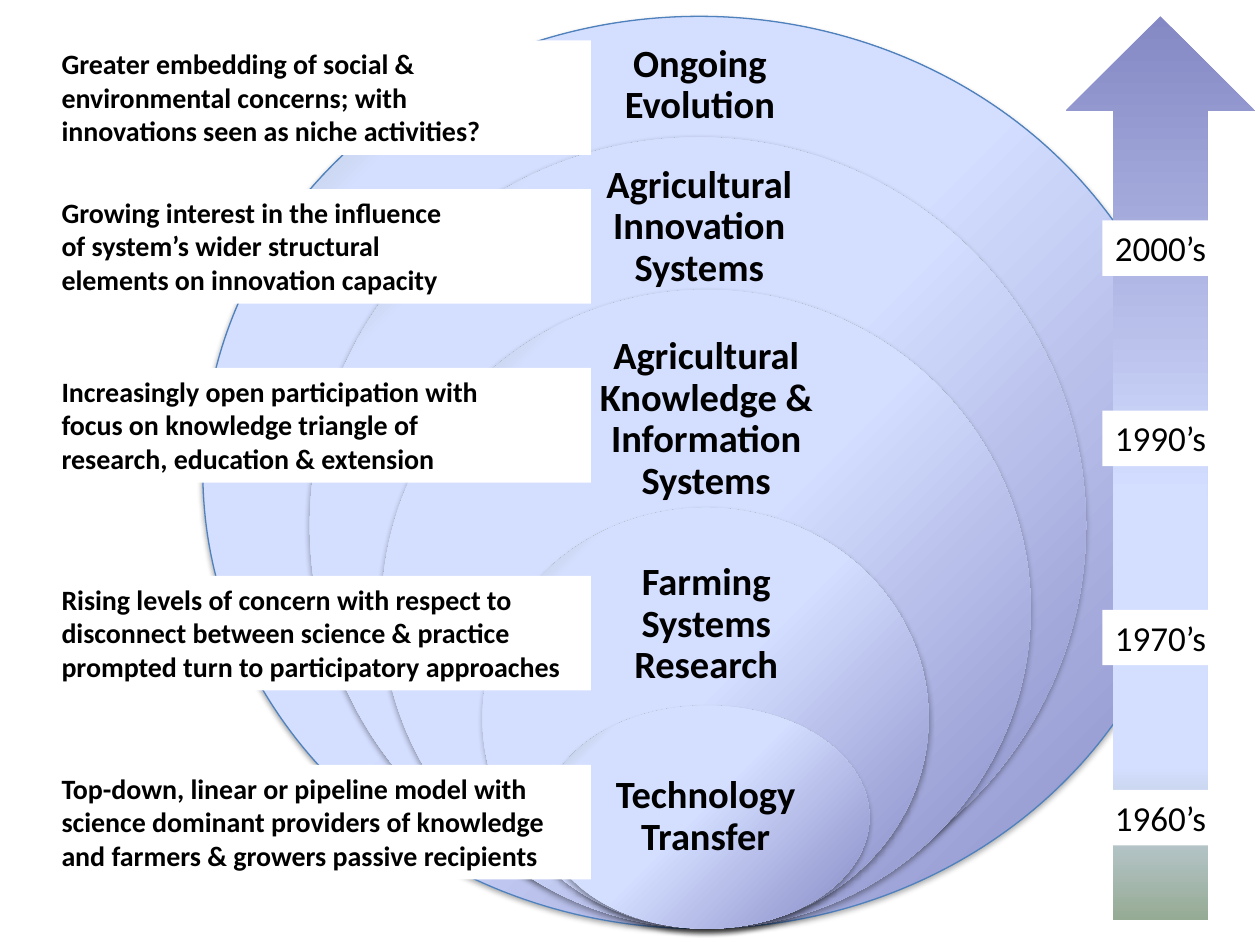
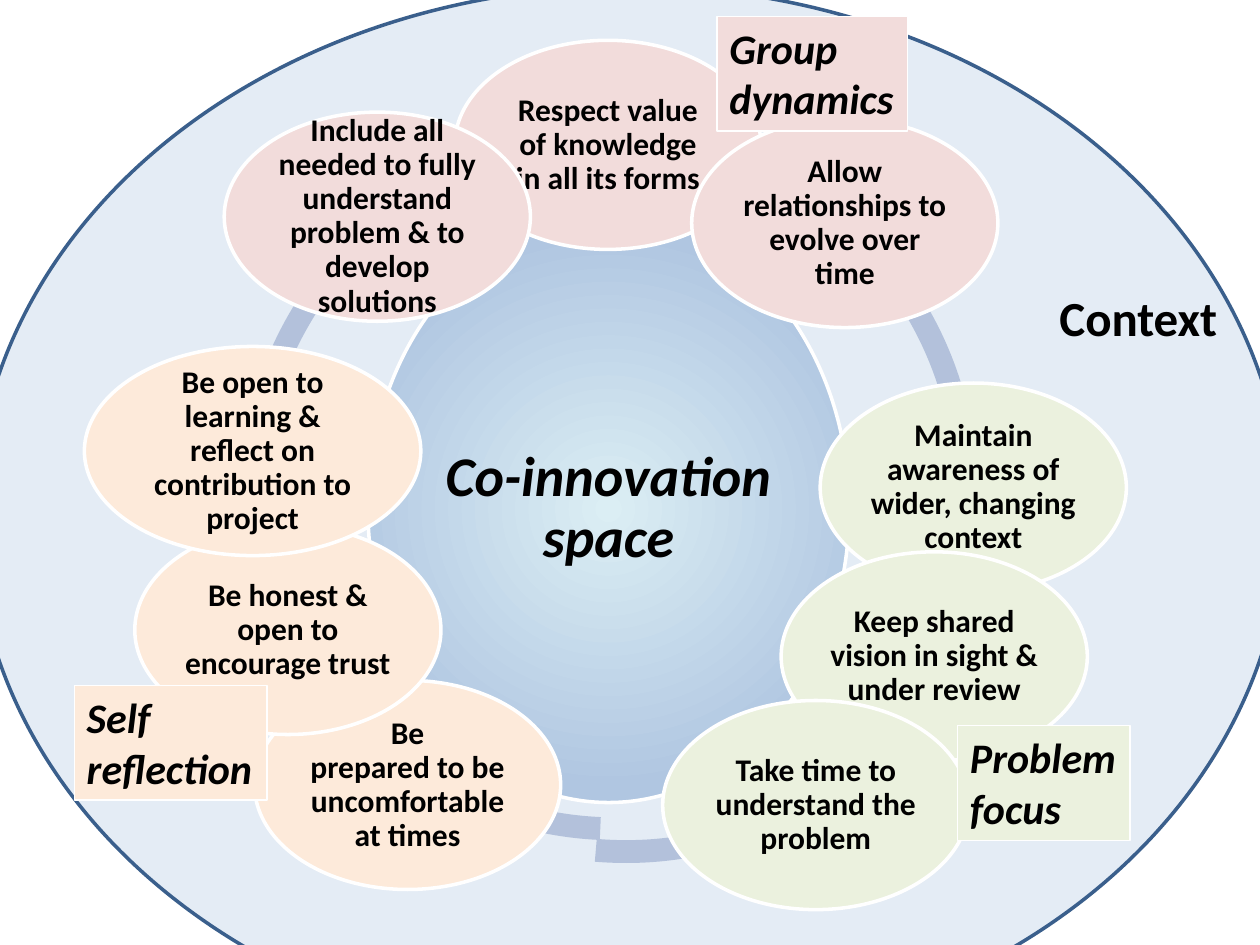
from pptx import Presentation
from pptx.dml.color import RGBColor
from pptx.enum.shapes import MSO_SHAPE
from pptx.enum.text import MSO_ANCHOR, MSO_AUTO_SIZE, PP_ALIGN
from pptx.oxml import parse_xml
from pptx.oxml.ns import nsdecls, qn
from pptx.util import Emu, Pt

SCALE = 9144
FONT = "Calibri"
INSCRIBED = 0.1464

COLORS = {
    "ink": "000000",
    "paper": "FFFFFF",
    "blue": "4F81BD",
    "rim": "3A5F8C",
    "arc": "B3C1DB",
    "group": "F2DCDB",
    "problem": "EBF1DE",
    "self": "FDEADA",
}
ERA_STOPS = [(0, "8488C4"), (53, "D4DEFF"), (83, "D4DEFF"), (100, "96AB94")]
CORE_STOPS = [(0, "DBEEF4"), (74, "B0C6E1"), (83, "B0C6E1"), (100, "CAD9EB")]
DOWNWARD = '<a:lin ang="5400000" scaled="0"/>'
FROM_CORNER = '<a:path path="circle"><a:fillToRect l="100000" t="100000"/></a:path>'
FROM_CENTER = ('<a:path path="circle"><a:fillToRect l="50000" t="50000" '
               'r="50000" b="50000"/></a:path>')


class Sketch:
    """Holds the deck style and the current page."""

    def __init__(self, width, height):
        self.deck = Presentation()
        self.deck.slide_width = self.px(width)
        self.deck.slide_height = self.px(height)
        self.page = None

    def px(self, length):
        """Turn px into EMU."""
        return Emu(length * SCALE)

    def color(self, name):
        """Look up a named colour."""
        return RGBColor.from_string(COLORS[name])

    def new_page(self):
        """Start a blank page."""
        self.page = self.deck.slides.add_slide(self.deck.slide_layouts[6])

    def paint(self, shape, fill=None, line=None, weight=2):
        """Set solid fill and outline."""
        if fill:
            shape.fill.solid()
            shape.fill.fore_color.rgb = self.color(fill)
        if line:
            shape.line.color.rgb = self.color(line)
            shape.line.width = Pt(weight)
        else:
            shape.line.fill.background()

    def shape(self, kind, frame, fill="paper", line=None, weight=2):
        """Add a flat preset shape."""
        shape = self.page.shapes.add_shape(kind, *map(self.px, frame))
        shape.shadow.inherit = False
        self.paint(shape, fill, line, weight)
        return shape

    def blend(self, shape, stops, direction):
        """Replace the solid fill with a gradient."""
        marks = "".join(f'<a:gs pos="{place * 1000}"><a:srgbClr val="{tint}"/></a:gs>'
                        for place, tint in stops)
        gradient = parse_xml(f'<a:gradFill {nsdecls("a")} rotWithShape="1">'
                             f'<a:gsLst>{marks}</a:gsLst>{direction}</a:gradFill>')
        properties = shape._element.spPr
        properties.replace(properties.find(qn("a:solidFill")), gradient)

    def fade(self, shape, percent):
        """Make a solid fill partly transparent."""
        tint = shape._element.spPr.find(qn("a:solidFill"))[0]
        tint.append(parse_xml(f'<a:alpha {nsdecls("a")} val="{percent * 1000}"/>'))

    def drop_shadow(self, shape):
        """Add a soft shadow below the shape."""
        effects = shape._element.spPr.find(qn("a:effectLst"))
        effects.append(parse_xml(
            f'<a:outerShdw {nsdecls("a")} blurRad="40000" dist="23000" dir="5400000" '
            'rotWithShape="0"><a:srgbClr val="000000"><a:alpha val="35000"/>'
            '</a:srgbClr></a:outerShdw>'))

    def text(self, frame, words, size, bold=True, italic=False):
        """Add a text box with one paragraph."""
        box = self.page.shapes.add_textbox(*map(self.px, frame))
        box.text_frame.word_wrap = True
        paragraph = box.text_frame.paragraphs[0]
        paragraph.text = words
        font = paragraph.font
        font.name, font.size, font.bold, font.italic = FONT, Pt(size), bold, italic
        font.color.rgb = self.color("ink")
        return box

    def centered(self, frame, words, size, inset, italic=False):
        """Add text centred both ways in its frame."""
        text_frame = self.text(frame, words, size, italic=italic).text_frame
        text_frame.vertical_anchor = MSO_ANCHOR.MIDDLE
        text_frame.margin_left = text_frame.margin_right = self.px(inset)
        text_frame.margin_top = text_frame.margin_bottom = self.px(inset)
        text_frame.paragraphs[0].alignment = PP_ALIGN.CENTER
        text_frame.paragraphs[0].line_spacing = 0.9

    def label(self, frame, words, size, fill=None, line=None, wrap=False, **style):
        """Add a text box that grows with its words."""
        box = self.text(frame, words, size, **style)
        box.text_frame.word_wrap = wrap
        box.text_frame.auto_size = MSO_AUTO_SIZE.SHAPE_TO_FIT_TEXT
        self.paint(box, fill, line, 0.75)

    def era(self, frame, title_frame, title, line=None):
        """Add one nested ellipse and its title."""
        ellipse = self.shape(MSO_SHAPE.OVAL, frame, line=line, weight=0.75)
        self.blend(ellipse, ERA_STOPS, FROM_CORNER)
        self.drop_shadow(ellipse)
        self.centered(title_frame, title, 22, 17)

    def bubble(self, frame, words, fill="paper", size=18, inset=3, italic=False):
        """Add a white-rimmed ellipse with text in its inscribed box."""
        ellipse = self.shape(MSO_SHAPE.OVAL, frame, fill, "paper")
        left, top, width, height = frame
        across, down = round(width * INSCRIBED), round(height * INSCRIBED)
        inner = (left + across, top + down, width - 2 * across, height - 2 * down)
        self.centered(inner, words, size, inset, italic)
        return ellipse

    def arc(self, left, top, start, end):
        """Add one piece of the ring, with angles in degrees."""
        piece = self.shape(MSO_SHAPE.BLOCK_ARC, (left, top, 586, 586), "arc")
        for index, value in enumerate((start * 0.6, end * 0.6, 0.031)):
            piece.adjustments[index] = value


ERAS = [
    ((161, 13, 788, 724), (408, 32, 295, 72), "Ongoing\nEvolution", "blue"),
    ((246, 109, 616, 616), (422, 145, 266, 71), "Agricultural Innovation Systems", None),
    ((303, 230, 515, 507), (427, 298, 267, 70),
     "Agricultural Knowledge & Information Systems", None),
    ((383, 403, 354, 334), (465, 466, 191, 60), "Farming Systems Research", None),
    ((432, 560, 258, 177), (469, 604, 182, 89), "Technology Transfer", None),
]
CAPTIONS = [
    (607, "Top-down, linear or pipeline model with science dominant providers of "
          "knowledge and farmers & growers passive recipients"),
    (32, "Greater embedding of social & environmental concerns; with\n"
         "innovations seen as niche activities?"),
    (150, "Growing interest in the influence\nof system’s wider structural\n"
          "elements on innovation capacity"),
    (292, "Increasingly open participation with\nfocus on knowledge triangle of\n"
          "research, education & extension"),
    (457, "Rising levels of concern with respect to disconnect between science & "
          "practice prompted turn to participatory approaches"),
]
DECADES = [(627, "1960’s"), (484, "1970’s"), (326, "1990’s"), (175, "2000’s")]

ARCS = [
    (179, 110, 139.98, 163.3),
    (192, 97, 111.87, 137.6),
    (196, 81, 92.52, 109.91),
    (204, 99, 76.15, 94.87),
    (204, 99, 35.17, 76.17),
    (184, 112, 14.08, 32.31),
    (190, 98, 215.4, 15.94),
    (190, 103, 186.26, 214.78),
    (198, 110, 160.97, 185.07),
]
PRINCIPLES = [
    (361, 32, 243, "group", "Respect value of knowledge in all its forms"),
    (549, 94, 243, "group", "Allow relationships to evolve over time"),
    (651, 304, 243, "problem", "Maintain awareness of wider, changing context"),
    (620, 438, 243, "problem", "Keep shared\nvision in sight & under review"),
    (526, 556, 243, "problem", "Take time to understand the problem"),
    (202, 540, 243, "self", "Be\nprepared to be\nuncomfortable at times"),
    (107, 417, 243, "self", "Be honest &\nopen to encourage trust"),
    (67, 275, 267, "self", "Be open to learning &\nreflect on contribution to project"),
    (178, 89, 243, "group",
     "Include all needed to fully understand problem & to develop solutions"),
]
THEMES = [
    ((59, 544, 153, 91), "Self\nreflection", "self"),
    ((569, 13, 151, 91), "Group\ndynamics", "group"),
    ((760, 576, 137, 91), "Problem\nfocus", "problem"),
]


def build_evolution(sketch):
    """Draw the nested eras with the timeline arrow."""
    sketch.new_page()
    for era in ERAS:
        sketch.era(*era)
    for top, words in CAPTIONS:
        sketch.label((39, top, 430, 91), words, 16, "paper", wrap=True)
    arrow = sketch.shape(MSO_SHAPE.UP_ARROW, (846, 13, 150, 717))
    sketch.blend(arrow, ERA_STOPS, DOWNWARD)
    for top, decade in DECADES:
        sketch.label((875, top, 93, 44), decade, 20, "paper", bold=False)


def build_space(sketch):
    """Draw the co-innovation space with its ring of principles."""
    sketch.new_page()
    context = sketch.shape(MSO_SHAPE.OVAL, (-20, -11, 1039, 843), "blue", "rim")
    sketch.fade(context, 15)
    for arc in ARCS:
        sketch.arc(*arc)
    core = sketch.bubble((292, 171, 382, 466), "Co-innovation\nspace",
                         size=32, inset=4, italic=True)
    sketch.blend(core, CORE_STOPS, FROM_CENTER)
    for left, top, width, theme, words in PRINCIPLES:
        sketch.bubble((left, top, width, 166), words, theme)
    for frame, words, theme in THEMES:
        sketch.label(frame, words, 24, theme, "paper", italic=True)
    sketch.label((831, 223, 147, 57), "Context", 28)


def main():
    """Build and save the deck."""
    sketch = Sketch(1000, 750)
    build_evolution(sketch)
    build_space(sketch)
    sketch.deck.save("out.pptx")


if __name__ == "__main__":
    main()
